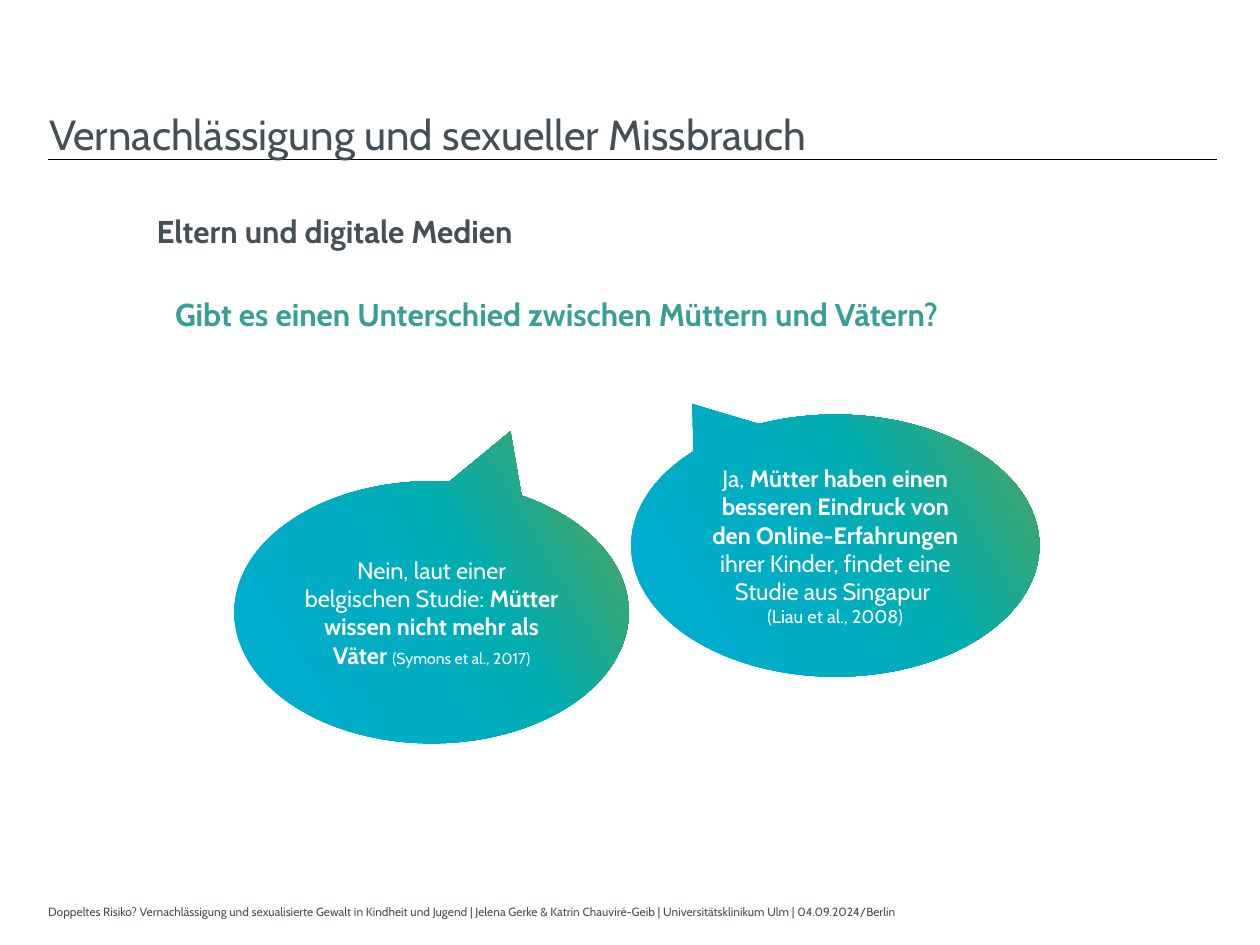
"""Build a slide on parents and digital media with two speech bubbles."""
from lxml import etree
from pptx import Presentation
from pptx.dml.color import RGBColor
from pptx.enum.shapes import MSO_CONNECTOR, MSO_SHAPE
from pptx.enum.text import MSO_ANCHOR, PP_ALIGN
from pptx.oxml.ns import qn
from pptx.util import Pt

LINE = MSO_CONNECTOR.STRAIGHT
BUBBLE = MSO_SHAPE.OVAL_CALLOUT
TOP, MIDDLE = MSO_ANCHOR.TOP, MSO_ANCHOR.MIDDLE
CENTER = PP_ALIGN.CENTER
FONT = "Cabin"
SLATE, TEAL, WHITE, BLACK = "445055", "379F96", "FFFFFF", "000000"
STOPS = [(0, "00ADD4"), (39, "00ADC3"), (62, "00ADB1"), (86, "31A77C"), (100, "61A047")]


def paint(color, code):
    """Give a colour format the colour of a hex string."""
    color.rgb = RGBColor.from_string(code)


def add_run(para, text, size, code, bold=False):
    """Add one styled run to a paragraph."""
    run = para.add_run()
    run.text = text
    font = run.font
    font.name, font.size, font.bold = FONT, Pt(size), bold
    paint(font.color, code)


def add_rule(slide, left, right, y):
    """Draw the thin rule below the title."""
    rule = slide.shapes.add_connector(LINE, Pt(left), Pt(y), Pt(right), Pt(y))
    rule.line.width = Pt(0.5)
    paint(rule.line.color, BLACK)
    etree.SubElement(rule._element.spPr, qn("a:effectLst"))


def add_label(slide, area, text, size, code=SLATE, bold=False,
              pads=(0, 4.3, 0, 2.9), anchor=TOP, indent=0):
    """Add a text box holding a single line of text."""
    frame = slide.shapes.add_textbox(*map(Pt, area)).text_frame
    frame.word_wrap = True
    frame.vertical_anchor = anchor
    (frame.margin_left, frame.margin_top,
     frame.margin_right, frame.margin_bottom) = map(Pt, pads)
    para = frame.paragraphs[0]
    if indent:
        para.level = 1
        props = para._p.get_or_add_pPr()
        props.set("marL", str(Pt(indent)))
        props.set("indent", "0")
    add_run(para, text, size, code, bold)


def fill_blend(shape):
    """Fill a shape with the slanted gradient from blue to green."""
    shape.fill.gradient()
    shape.fill.gradient_angle = 30
    stops = shape._element.spPr.find(".//" + qn("a:gsLst"))
    for stop in list(stops):
        stops.remove(stop)
    for place, code in STOPS:
        stop = etree.SubElement(stops, qn("a:gs"), pos=str(place * 1000))
        etree.SubElement(stop, qn("a:srgbClr"), val=code)


def add_bubble(slide, area, tip, lines):
    """Add a speech bubble; each line is a list of (text, size, bold) runs."""
    shape = slide.shapes.add_shape(BUBBLE, *map(Pt, area))
    shape.shadow.inherit = False
    shape.adjustments[0], shape.adjustments[1] = tip
    fill_blend(shape)
    shape.line.fill.background()
    frame = shape.text_frame
    frame.word_wrap = True
    frame.vertical_anchor = MIDDLE
    para = frame.paragraphs[0]
    para.alignment = CENTER
    for index, runs in enumerate(lines):
        if index:
            para.add_line_break()
        for text, size, bold in runs:
            add_run(para, text, size, WHITE, bold)


def main():
    """Build and save the slide."""
    deck = Presentation()
    deck.slide_width, deck.slide_height = Pt(720), Pt(540)
    slide = deck.slides.add_slide(deck.slide_layouts[6])

    add_rule(slide, 27.5, 695.5, 91.2)
    add_label(slide, (27.5, 512, 500, 18),
              "Doppeltes Risiko? Vernachlässigung und sexualisierte Gewalt in Kindheit und Jugend"
              " | Jelena Gerke & Katrin Chauviré-Geib | Universitätsklinikum Ulm | 04.09.2024/Berlin",
              6.8, pads=(0, 3.6, 7.2, 3.6), anchor=MIDDLE)
    add_label(slide, (28, 57.6, 510.5, 34.5), "Vernachlässigung und sexueller Missbrauch", 24)
    add_label(slide, (90, 164, 541.5, 65.5),
              "Gibt es einen Unterschied zwischen Müttern und Vätern?", 18, TEAL, True, indent=10)
    add_label(slide, (89.5, 116.6, 583, 47.5), "Eltern und digitale Medien", 18, bold=True)

    add_bubble(slide, (133.9, 275, 225.4, 149.8), (0.2, -0.69), [
        [("Nein, laut einer belgischen Studie: ", 13.5, False),
         ("Mütter wissen nicht mehr als Väter ", 13.5, True),
         ("(Symons et al., 2017)", 9, False)]])
    add_bubble(slide, (360.7, 236.9, 233.3, 149.8), (-0.35, -0.54), [
        [("Ja, ", 13.5, False),
         ("Mütter haben einen besseren Eindruck von den Online-Erfahrungen ", 13.5, True),
         ("ihrer Kinder, findet eine Studie aus Singapur ", 13.5, False)],
        [("(Liau et al., 2008)", 10.5, False)]])

    deck.save("out.pptx")


if __name__ == "__main__":
    main()
